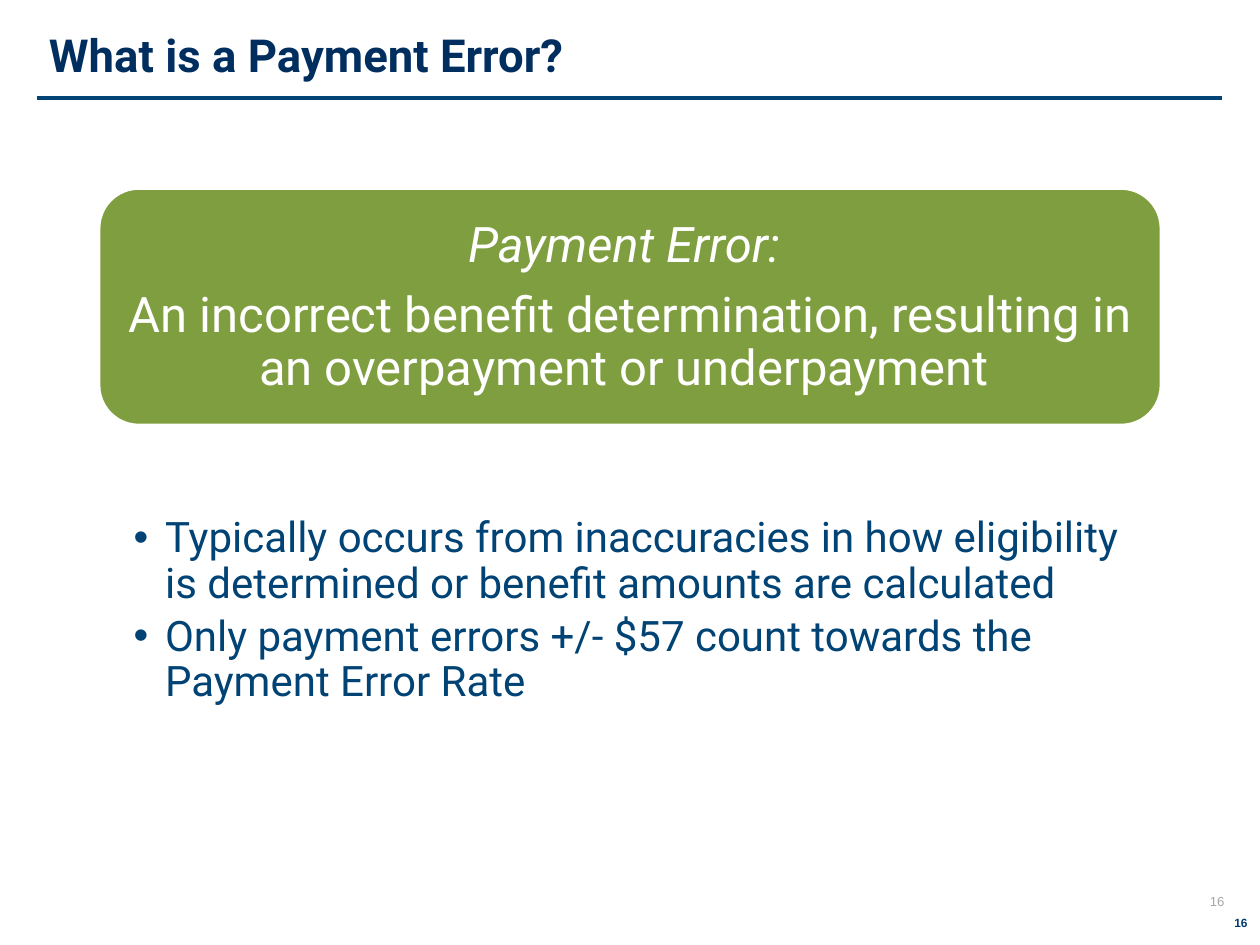
"""Build the slide that explains what a payment error is."""
from lxml.etree import SubElement as Sub
from pptx import Presentation
from pptx.dml.color import RGBColor
from pptx.enum.shapes import MSO_CONNECTOR as Link, MSO_SHAPE as Shape
from pptx.enum.text import MSO_ANCHOR as Anchor, PP_ALIGN as Align
from pptx.oxml.ns import qn
from pptx.util import Inches, Pt

NAVY = RGBColor(0x00, 0x2E, 0x5E)
BLUE = RGBColor(0x01, 0x43, 0x74)
DEEP = RGBColor(0x00, 0x3B, 0x70)
GREEN = RGBColor(0x7F, 0x9E, 0x3F)
GRAY = RGBColor(0xA6, 0xA6, 0xA6)
WHITE = RGBColor(0xFF, 0xFF, 0xFF)

deck = Presentation()
deck.slide_width, deck.slide_height = Inches(10), Inches(7.5)
slide = deck.slides.add_slide(deck.slide_layouts[6])
COL, ROW = deck.slide_width / 100, deck.slide_height / 75


def grid(left, top, width, height):
    return int(left * COL), int(top * ROW), int(width * COL), int(height * ROW)


def write(lines, box, size, color, font="Roboto", bold=False, slant=(),
          align=Align.LEFT, anchor=Anchor.TOP, pad=(1, 0.5, 1, 0.5),
          pitch=None, after=0, bullet=None):
    frame = slide.shapes.add_textbox(*grid(*box)).text_frame
    frame.word_wrap = True
    frame.vertical_anchor = anchor
    (frame.margin_left, frame.margin_top,
     frame.margin_right, frame.margin_bottom) = grid(*pad)
    for at, line in enumerate(lines):
        para = frame.paragraphs[0] if at == 0 else frame.add_paragraph()
        para.alignment = align
        para.line_spacing = pitch
        para.space_after = Pt(after)
        run = para.add_run()
        run.text = line
        run.font.name, run.font.size = font, Pt(size)
        run.font.bold, run.font.italic = bold, at in slant
        run.font.color.rgb = color
        if bullet:
            props = para._p.get_or_add_pPr()
            props.set("marL", str(int(2.5 * COL)))
            props.set("indent", str(int(-2.5 * COL)))
            Sub(props, qn("a:buFont"), typeface="Arial")
            Sub(props, qn("a:buChar"), char=bullet)


write(["16"], (94.9, 70.9, 3.4, 1.3), 7.5, GRAY, font="Arial",
      align=Align.CENTER, anchor=Anchor.MIDDLE, pad=(0, 0, 0, 0))

rule = slide.shapes.add_connector(
    Link.STRAIGHT, int(2.9 * COL), int(7.8 * ROW), int(97 * COL), int(7.8 * ROW))
rule.line.color.rgb = BLUE
rule.line.width = Pt(2.25)
Sub(rule._element.spPr, qn("a:effectLst"))

write(["What is a Payment Error?"], (2.9, 1.3, 94.3, 6.5), 26, NAVY,
      bold=True, anchor=Anchor.MIDDLE, pitch=0.9)
write(["16"], (93.8, 72.2, 6.2, 3.1), 6.8, DEEP, font="Arial",
      bold=True, align=Align.RIGHT)

panel = slide.shapes.add_shape(
    Shape.ROUNDED_RECTANGLE, *grid(7.9, 15, 84.2, 18.7))
panel.shadow.inherit = False
panel.fill.solid()
panel.fill.fore_color.rgb = GREEN
panel.line.color.rgb = WHITE
panel.line.width = Pt(1)

write(["Payment Error: ",
       "An incorrect benefit determination, resulting in an overpayment or underpayment "],
      (8.8, 16, 82.4, 16.9), 28, WHITE, slant=(0,), align=Align.CENTER,
      anchor=Anchor.MIDDLE, pad=(1.2, 1.2, 1.2, 1.2), pitch=0.9, after=10)

write(["Typically occurs from inaccuracies in how eligibility is determined or benefit amounts are calculated",
       "Only payment errors +/- $57 count towards the Payment Error Rate "],
      (7.9, 40.7, 84.2, 16.2), 24, BLUE, pad=(2.7, 0.3, 1.9, 0.3),
      pitch=0.9, after=4.5, bullet="•")

deck.save("out.pptx")
